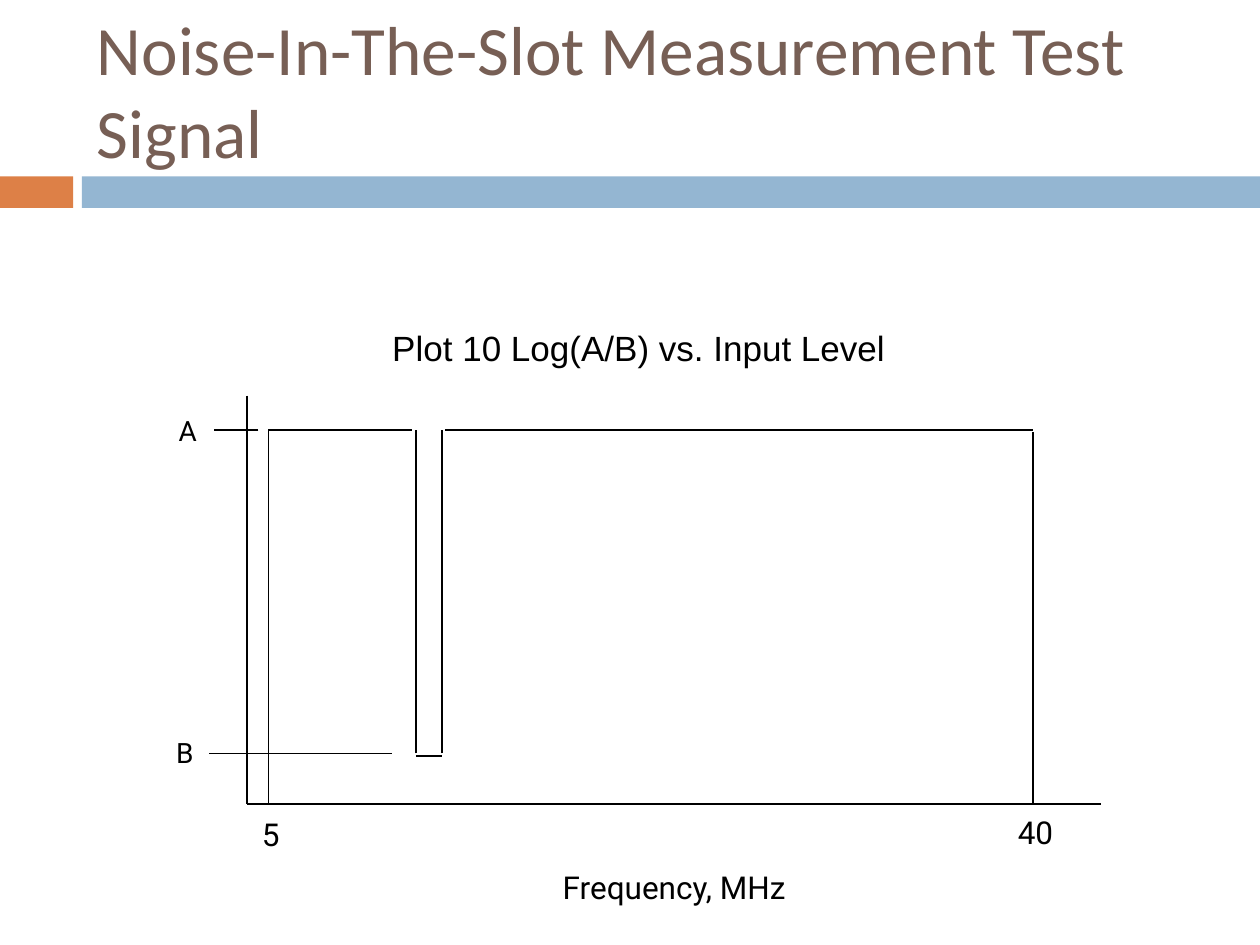
"""Build the noise-in-the-slot measurement test signal slide."""
from dataclasses import dataclass

from lxml.etree import SubElement
from pptx import Presentation
from pptx.dml.color import RGBColor
from pptx.enum.shapes import MSO_CONNECTOR as Connector, MSO_SHAPE as Shape
from pptx.enum.text import MSO_ANCHOR as Anchor, PP_ALIGN as Align
from pptx.oxml.ns import qn
from pptx.slide import Slide
from pptx.util import Emu, Inches, Pt

PX = Inches(1) // 100
BLACK = RGBColor(0x00, 0x00, 0x00)
BROWN = RGBColor(0x77, 0x5F, 0x55)
ORANGE = RGBColor(0xDD, 0x80, 0x47)
BLUE = RGBColor(0x94, 0xB6, 0xD2)

LEVEL_A, LEVEL_B, BASELINE = 341, 598, 638
AXIS, BAND_START, BAND_END = 196, 213, 820
SLOT_LEFT, SLOT_RIGHT = 330, 351


@dataclass(frozen=True)
class Bar:
    left: int
    width: int
    color: RGBColor


@dataclass(frozen=True)
class Segment:
    x1: int
    y1: int
    x2: int
    y2: int


@dataclass(frozen=True)
class Label:
    text: str
    left: int
    top: int
    width: int
    height: int
    size: float
    font: str = "Roboto"
    align: Align = Align.LEFT
    anchor: Anchor = Anchor.TOP
    color: RGBColor = BLACK


BARS = [Bar(0, 58, ORANGE), Bar(65, 935, BLUE)]

SEGMENTS = [
    Segment(AXIS, 314, AXIS, BASELINE),
    Segment(AXIS, BASELINE, 874, BASELINE),
    Segment(BAND_START, BASELINE, BAND_START, LEVEL_A),
    Segment(BAND_START, LEVEL_A, SLOT_LEFT - 3, LEVEL_A),
    Segment(SLOT_LEFT, LEVEL_B, SLOT_LEFT, LEVEL_A),
    Segment(SLOT_RIGHT, LEVEL_B, SLOT_RIGHT, LEVEL_A),
    Segment(SLOT_LEFT, LEVEL_B + 2, SLOT_RIGHT, LEVEL_B + 2),
    Segment(SLOT_RIGHT + 2, LEVEL_A, BAND_END, LEVEL_A),
    Segment(BAND_END, BASELINE, BAND_END, LEVEL_A + 2),
    Segment(311, LEVEL_B, 166, LEVEL_B),
    Segment(205, LEVEL_A, 170, LEVEL_A),
]

LABELS = [
    Label("5", 198, 642, 57, 40, 18),
    Label("40", 798, 640, 57, 40, 18),
    Label("Frequency, MHz", 189, 684, 692, 40, 18, align=Align.CENTER),
    Label("A", 132, 323, 32, 37, 16),
    Label("B", 130, 579, 32, 37, 16),
    Label("Plot 10 Log(A/B) vs. Input Level", 161, 254, 692, 44, 20, "Arial", Align.CENTER),
    Label("Noise-In-The-Slot Measurement Test Signal", 67, 17, 892, 108, 39.6,
          "Calibri", anchor=Anchor.MIDDLE, color=BROWN),
]


def px(length: int) -> Emu:
    """Turn px into EMU."""
    return Emu(length * PX)


def draw_bar(slide: Slide, bar: Bar) -> None:
    """Draw one part of the band under the title."""
    shape = slide.shapes.add_shape(Shape.RECTANGLE, px(bar.left), px(140), px(bar.width), px(25))
    shape.shadow.inherit = False
    shape.fill.solid()
    shape.fill.fore_color.rgb = bar.color
    shape.line.fill.background()


def draw_segment(slide: Slide, segment: Segment) -> None:
    """Draw one thin black line of the plot."""
    connector = slide.shapes.add_connector(
        Connector.STRAIGHT, px(segment.x1), px(segment.y1), px(segment.x2), px(segment.y2))
    connector.line.color.rgb = BLACK
    connector.line.width = Pt(1)
    SubElement(connector._element.spPr, qn("a:effectLst"))


def draw_label(slide: Slide, label: Label) -> None:
    """Draw one text box."""
    shape = slide.shapes.add_textbox(
        px(label.left), px(label.top), px(label.width), px(label.height))
    frame = shape.text_frame
    frame.word_wrap = True
    frame.vertical_anchor = label.anchor
    paragraph = frame.paragraphs[0]
    paragraph.text = label.text
    paragraph.alignment = label.align
    paragraph.font.name = label.font
    paragraph.font.size = Pt(label.size)
    paragraph.font.color.rgb = label.color


def main() -> None:
    """Build and save the presentation."""
    presentation = Presentation()
    presentation.slide_width = px(1000)
    presentation.slide_height = px(750)
    slide = presentation.slides.add_slide(presentation.slide_layouts[6])
    for bar in BARS:
        draw_bar(slide, bar)
    for segment in SEGMENTS:
        draw_segment(slide, segment)
    for label in LABELS:
        draw_label(slide, label)
    presentation.save("out.pptx")


if __name__ == "__main__":
    main()
